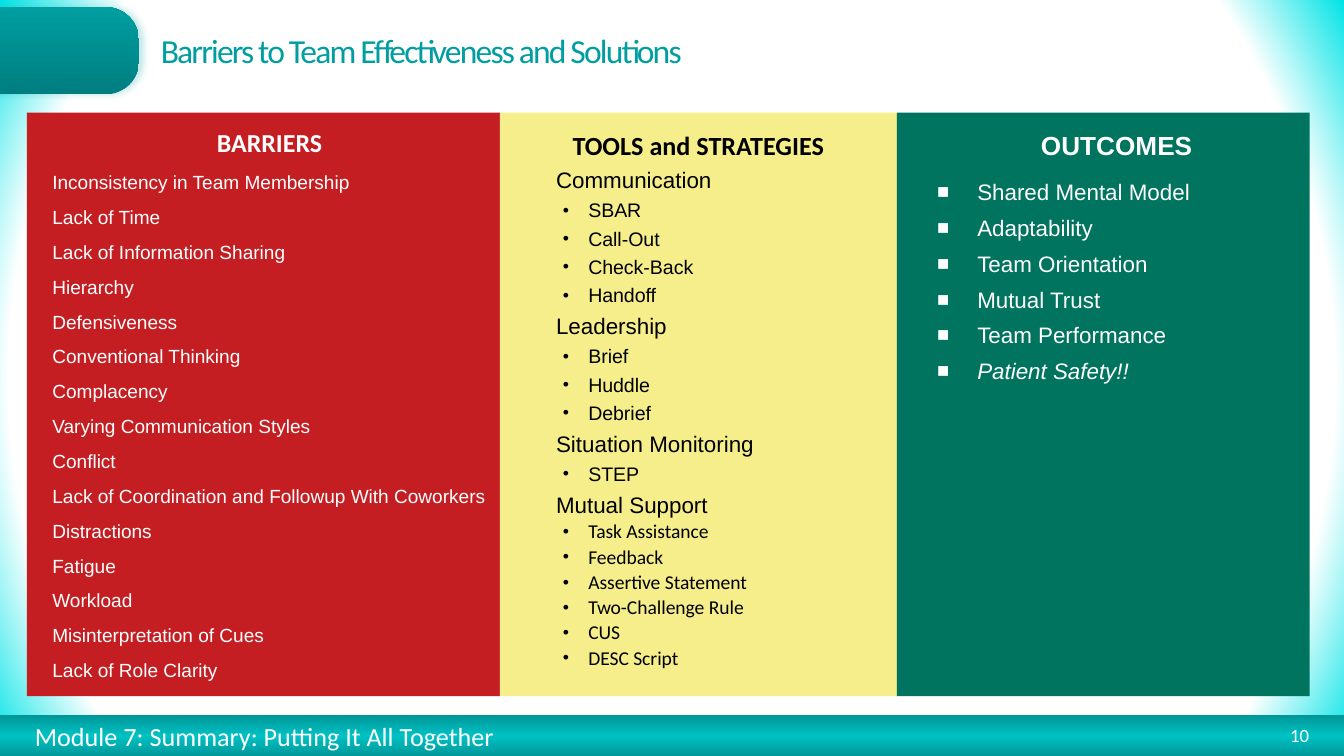
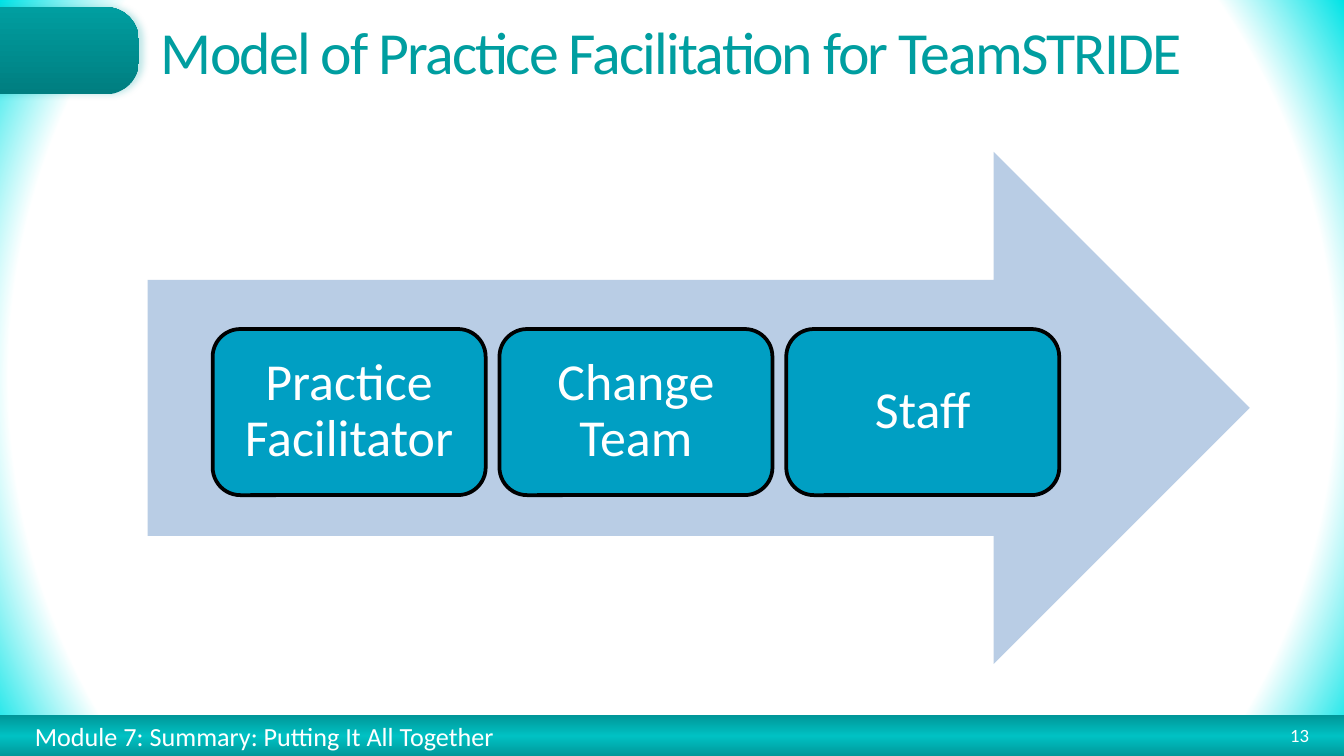
from pptx import Presentation
from pptx.dml.color import RGBColor
from pptx.enum.shapes import MSO_SHAPE as SHAPE
from pptx.enum.text import MSO_ANCHOR as ANCHOR, PP_ALIGN as ALIGN
from pptx.oxml import parse_xml
from pptx.oxml.ns import nsdecls, qn
from pptx.util import Cm, Pt

# Content
FOOTER = "Module 7: Summary: Putting It All Together"
BARRIERS = [
    "Inconsistency in Team Membership", "Lack of Time",
    "Lack of Information Sharing", "Hierarchy", "Defensiveness",
    "Conventional Thinking", "Complacency", "Varying Communication Styles",
    "Conflict", "Lack of Coordination and Followup With Coworkers",
    "Distractions", "Fatigue", "Workload", "Misinterpretation of Cues",
    "Lack of Role Clarity",
]
TOOLS = {
    "Communication": ["SBAR", "Call-Out", "Check-Back", "Handoff"],
    "Leadership": ["Brief", "Huddle", "Debrief"],
    "Situation Monitoring": ["STEP"],
    "Mutual Support": ["Task Assistance", "Feedback", "Assertive Statement",
                       "Two-Challenge Rule", "CUS", "DESC Script"],
}
OUTCOMES = ["Shared Mental Model", "Adaptability", "Team Orientation",
            "Mutual Trust", "Team Performance", "Patient Safety!!"]
STEPS = ["Practice Facilitator", "Change Team", "Staff"]

# Shared look
COLORS = {
    "teal": "009EA0", "teal_dark": "007E80", "band": "009698",
    "band_light": "00C1C3", "glow": "00E3E6", "white": "FFFFFF",
    "black": "000000", "red": "C41E22", "yellow": "F5EE8B",
    "green": "017460", "arrow": "B9CDE5", "step": "009FC3",
}
SANS, BODY = "Calibri", "Arial"


def rgb(name):
    return RGBColor.from_string(COLORS[name])


def set_gradient(fill, parent, stops, direction):
    """Fill parent with (position, colour) stops along the given direction."""
    fill.gradient()
    gs = "".join(f'<a:gs pos="{pos * 1000}"><a:srgbClr val="{COLORS[c]}"/></a:gs>'
                 for pos, c in stops)
    grad = parse_xml(f'<a:gradFill {nsdecls("a")} rotWithShape="1">'
                     f'<a:gsLst>{gs}</a:gsLst>{direction}</a:gradFill>')
    parent.replace(parent.find(qn("a:gradFill")), grad)


def linear(angle):
    return f'<a:lin ang="{angle * 60000}" scaled="0"/>'


def add_shape(s, kind, left, top, width, height, color=None):
    sp = s.shapes.add_shape(kind, Cm(left), Cm(top), Cm(width), Cm(height))
    sp.shadow.inherit = False
    sp.line.fill.background()
    if color:
        sp.fill.solid()
        sp.fill.fore_color.rgb = rgb(color)
    return sp


def set_frame(tf, anchor, margins):
    tf.word_wrap = True
    tf.vertical_anchor = anchor
    (tf.margin_left, tf.margin_top,
     tf.margin_right, tf.margin_bottom) = [Cm(m) for m in margins]
    return tf


def add_box(s, left, top, width, height, margins=(0, 0, 0, 0)):
    sp = s.shapes.add_textbox(Cm(left), Cm(top), Cm(width), Cm(height))
    return set_frame(sp.text_frame, ANCHOR.MIDDLE, margins)


def add_text(tf, text, size, color, font=SANS, bold=False, italic=False,
             align=ALIGN.LEFT, left=0, hang=0, line=1.0, before=0, after=0,
             bullet=None, track=0):
    p = tf.paragraphs[0] if not tf.paragraphs[0].runs else tf.add_paragraph()
    p.alignment = align
    p.line_spacing = line
    p.space_before, p.space_after = Pt(before), Pt(after)
    pPr = p._p.get_or_add_pPr()
    pPr.set("marL", str(Cm(left)))
    pPr.set("indent", str(-Cm(hang)))
    if bullet:
        pPr.append(parse_xml(f'<a:buSzPct {nsdecls("a")} val="90000"/>'))
        pPr.append(parse_xml(f'<a:buFont {nsdecls("a")} typeface="{BODY}"/>'))
        pPr.append(parse_xml(f'<a:buChar {nsdecls("a")} char="{bullet}"/>'))
    r = p.add_run()
    r.text = text
    r.font.name, r.font.size = font, Pt(size)
    r.font.bold, r.font.italic = bold, italic
    r.font.color.rgb = rgb(color)
    if track:
        r._r.get_or_add_rPr().set("spc", str(track * 100))


def add_base(prs, title, title_size, number):
    """New slide with background, footer band, corner tab and title."""
    s = prs.slides.add_slide(prs.slide_layouts[6])
    bg = s.background.fill
    set_gradient(bg, s.element.find(".//" + qn("p:bgPr")),
                 [(0, "white"), (86, "white"), (100, "glow")],
                 '<a:path path="circle"><a:fillToRect l="50000" t="50000" '
                 'r="50000" b="50000"/></a:path>')
    # Footer band
    band = add_shape(s, SHAPE.RECTANGLE, -0.23, 13.52, 25.83, 0.79)
    set_gradient(band.fill, band.element.spPr,
                 [(0, "band"), (50, "band_light"), (100, "band")], linear(270))
    add_text(add_box(s, 0.66, 13.56, 13.61, 0.71), FOOTER, 14, "white")
    add_text(add_box(s, 22.68, 13.54, 2.06, 0.71), number, 10, "white",
             align=ALIGN.RIGHT)
    # Corner tab
    tab = add_shape(s, SHAPE.ROUND_2_SAME_RECTANGLE, 0.38, -0.46, 1.65, 2.84)
    tab.rotation = 90
    tab.adjustments[0], tab.adjustments[1] = 0.38, 0.01
    set_gradient(tab.fill, tab.element.spPr,
                 [(0, "teal_dark"), (100, "teal")], linear(180))
    tab.element.spPr.find(qn("a:effectLst")).append(parse_xml(
        f'<a:outerShdw {nsdecls("a")} blurRad="{Pt(4)}" dist="{Pt(2)}" dir="0" '
        f'rotWithShape="0"><a:srgbClr val="{COLORS["teal"]}">'
        '<a:alpha val="25000"/></a:srgbClr></a:outerShdw>'))
    # Title
    add_text(add_box(s, 2.79, 0, 22.28, 1.9, (0.25, 0.13, 0.25, 0.13)),
             title, title_size, "teal", track=-1)
    return s


def add_columns(s):
    """Three touching panels; returns their text frames."""
    left, frames = 0.51, []
    for width, color in [(8.94, "red"), (7.5, "yellow"), (7.8, "green")]:
        sp = add_shape(s, SHAPE.RECTANGLE, left, 2.13, width, 11.03, color)
        frames.append(set_frame(sp.text_frame, ANCHOR.TOP,
                                (0.25, 0.38, 0.25, 0.13)))
        left += width
    return frames


def build_barriers(prs):
    s = add_base(prs, "Barriers to Team Effectiveness and Solutions", 18, "10")
    barriers, tools, outcomes = add_columns(s)
    head = dict(bold=True, align=ALIGN.CENTER)

    # Barriers
    indent = dict(left=0.71, hang=0.48)
    add_text(barriers, "BARRIERS", 13.9, "white", line=0.8, after=4.5,
             **head, **indent)
    for item in BARRIERS:
        add_text(barriers, item, 10.2, "white", BODY, line=1.2, after=4,
                 **indent)

    # Tools and strategies
    add_text(tools, "TOOLS and STRATEGIES", 14, "black", line=0.9, **head)
    for group, items in TOOLS.items():
        add_text(tools, group, 12, "black", BODY, left=0.81, before=3)
        if group == "Mutual Support":
            style = dict(font=SANS, line=0.9, before=2.2)
        else:
            style = dict(font=BODY, before=2.6)
        for item in items:
            add_text(tools, item, 10.5, "black", left=1.42, hang=0.48,
                     bullet="•", **style)

    # Outcomes
    indent = dict(left=1.27, hang=0.76)
    add_text(outcomes, "OUTCOMES", 14, "white", BODY, line=0.9, after=4.5,
             **head, **indent)
    for item in OUTCOMES:
        add_text(outcomes, item, 12, "white", BODY, before=4.8, bullet="■",
                 italic=item == OUTCOMES[-1], **indent)


def build_model(prs):
    s = add_base(prs, "Model of Practice Facilitation for TeamSTRIDE", 32, "13")
    add_shape(s, SHAPE.RIGHT_ARROW, 2.79, 2.87, 20.83, 9.68, "arrow")
    width, gap = 5.16, 0.26
    for i, step in enumerate(STEPS):
        sp = add_shape(s, SHAPE.ROUNDED_RECTANGLE, 4.02 + i * (width + gap),
                       6.22, width, 3.14, "step")
        sp.line.color.rgb = rgb("black")
        sp.line.width = Pt(2)
        tf = set_frame(sp.text_frame, ANCHOR.MIDDLE, (0.45,) * 4)
        add_text(tf, step, 27.8, "white", align=ALIGN.CENTER, line=0.9)


def main():
    prs = Presentation()
    prs.slide_width, prs.slide_height = Cm(25.4), Cm(14.29)
    build_barriers(prs)
    build_model(prs)
    prs.save("out.pptx")


if __name__ == "__main__":
    main()
